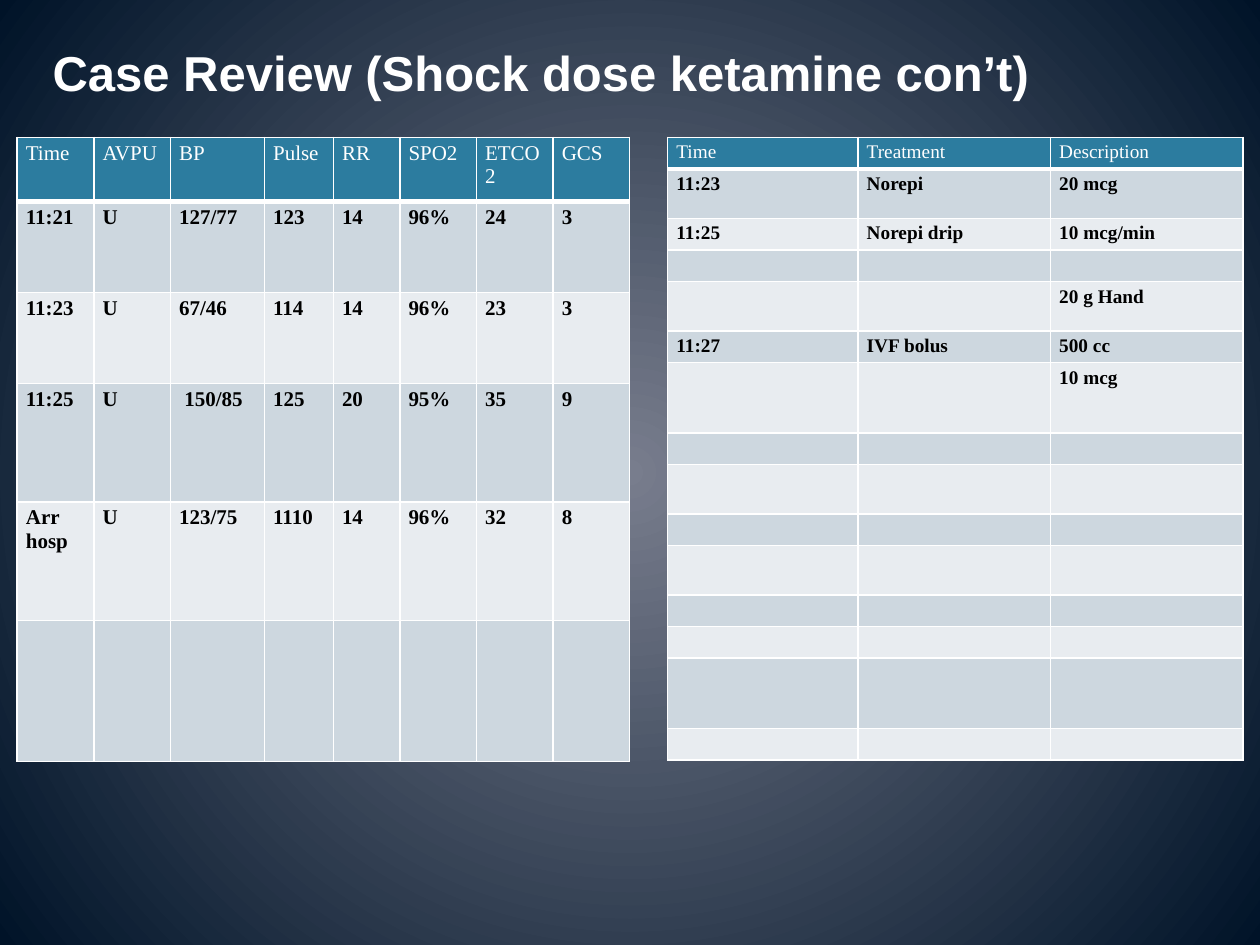
from lxml.etree import SubElement
from pptx import Presentation
from pptx.dml.color import RGBColor
from pptx.enum.text import MSO_AUTO_SIZE as AutoSize
from pptx.oxml.ns import qn
from pptx.util import Pt

WHITE, BLACK = "FFFFFF", "000000"
HEADER, DARK_BAND, LIGHT_BAND = "2C7C9F", "CDD7DF", "E8ECF0"

VITALS = [
    ["Time", "AVPU", "BP", "Pulse", "RR", "SPO2", "ETCO2", "GCS"],
    ["11:21", "U", "127/77", "123", "14", "96%", "24", "3"],
    ["11:23", "U", "67/46", "114", "14", "96%", "23", "3"],
    ["11:25", "U", " 150/85", "125", "20", "95%", "35", "9"],
    ["Arr hosp", "U", "123/75", "1110", "14", "96%", "32", "8"],
    [""] * 8,
]
VITALS_WIDTHS = [43.8, 43.8, 53.7, 39.4, 38, 43.8, 43.8, 43.8]
VITALS_HEIGHTS = [36.6, 52, 52, 67.7, 67.7, 80.6]

TREATMENTS = [
    ["Time", "Treatment", "Description"],
    ["11:23", "Norepi", "20 mcg"],
    ["11:25", "Norepi drip", "10 mcg/min"],
    [""] * 3,
    ["", "", "20 g Hand"],
    ["11:27", "IVF bolus", "500 cc"],
    ["", "", "10 mcg"],
] + [[""] * 3] * 8
TREATMENT_WIDTHS = [108.8, 110, 110]
ONE, TWO, THREE = 18.1, 28.2, 40.2
TREATMENT_HEIGHTS = [ONE, TWO, ONE, ONE, TWO, ONE, THREE, ONE,
                     TWO, ONE, TWO, ONE, ONE, THREE, ONE]


def color(value):
    return RGBColor.from_string(value)


def style_font(para, name, size, value, bold):
    font = para.font
    font.name, font.size, font.bold = name, Pt(size), bold
    font.color.rgb = color(value)


def add_borders(cell, bottom):
    props = cell._tc.get_or_add_tcPr()
    widths = {"a:lnL": 1, "a:lnR": 1, "a:lnT": 1, "a:lnB": bottom}
    for index, (tag, width) in enumerate(widths.items()):
        line = SubElement(props, qn(tag), w=str(Pt(width)))
        fill = SubElement(line, qn("a:solidFill"))
        SubElement(fill, qn("a:srgbClr"), val=WHITE)
        props.insert(index, line)


def paint_background(page):
    fill = page.background.fill
    fill.gradient()
    for stop, value in zip(fill.gradient_stops, ["787D8D", "001328"]):
        stop.color.rgb = color(value)
    gradient = page._element.find(".//" + qn("a:gradFill"))
    gradient.remove(gradient.find(qn("a:lin")))
    circle = SubElement(gradient, qn("a:path"), path="circle")
    SubElement(circle, qn("a:fillToRect"), l="50000", t="50000", r="50000", b="50000")


def add_title(page, left, top, width, height):
    box = page.shapes.add_textbox(Pt(left), Pt(top), Pt(width), Pt(height))
    frame = box.text_frame
    frame.word_wrap = True
    frame.auto_size = AutoSize.SHAPE_TO_FIT_TEXT
    para = frame.paragraphs[0]
    para.text = "Case Review (Shock dose ketamine con’t)"
    style_font(para, "Arial", 28, WHITE, True)


def fill_cell(cell, text, row, size):
    header = row == 0
    cell.margin_left = cell.margin_right = Pt(5)
    cell.margin_top = cell.margin_bottom = Pt(2.5)
    cell.fill.solid()
    band = DARK_BAND if row % 2 else LIGHT_BAND
    cell.fill.fore_color.rgb = color(HEADER if header else band)
    add_borders(cell, 3 if header else 1)
    para = cell.text_frame.paragraphs[0]
    para.text = text
    style_font(para, "Times New Roman", size, WHITE if header else BLACK, not header)


def add_case_table(page, left, top, data, widths, heights, size):
    table = page.shapes.add_table(
        len(heights), len(widths), Pt(left), Pt(top), Pt(sum(widths)), Pt(sum(heights))
    ).table
    for column, width in zip(table.columns, widths):
        column.width = Pt(width)
    for index, (row, height) in enumerate(zip(table.rows, heights)):
        row.height = Pt(height)
        for cell, text in zip(row.cells, data[index]):
            fill_cell(cell, text, index, size)


def main():
    deck = Presentation()
    deck.slide_width, deck.slide_height = Pt(720), Pt(540)
    page = deck.slides.add_slide(deck.slide_layouts[6])
    paint_background(page)
    add_case_table(page, 9.8, 78.5, VITALS, VITALS_WIDTHS, VITALS_HEIGHTS, 12)
    add_case_table(page, 381.5, 78.5, TREATMENTS, TREATMENT_WIDTHS, TREATMENT_HEIGHTS, 11)
    add_title(page, 23, 21, 608.4, 41)
    deck.save("out.pptx")


if __name__ == "__main__":
    main()
